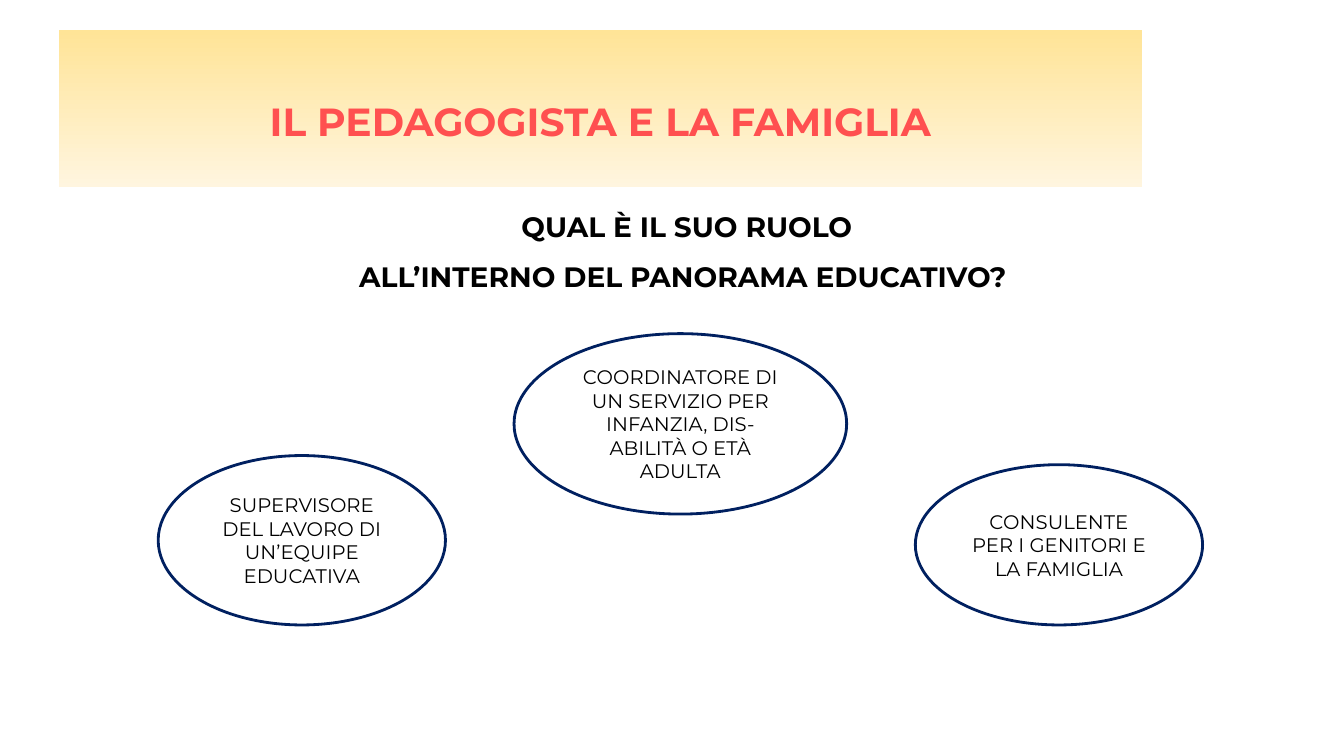
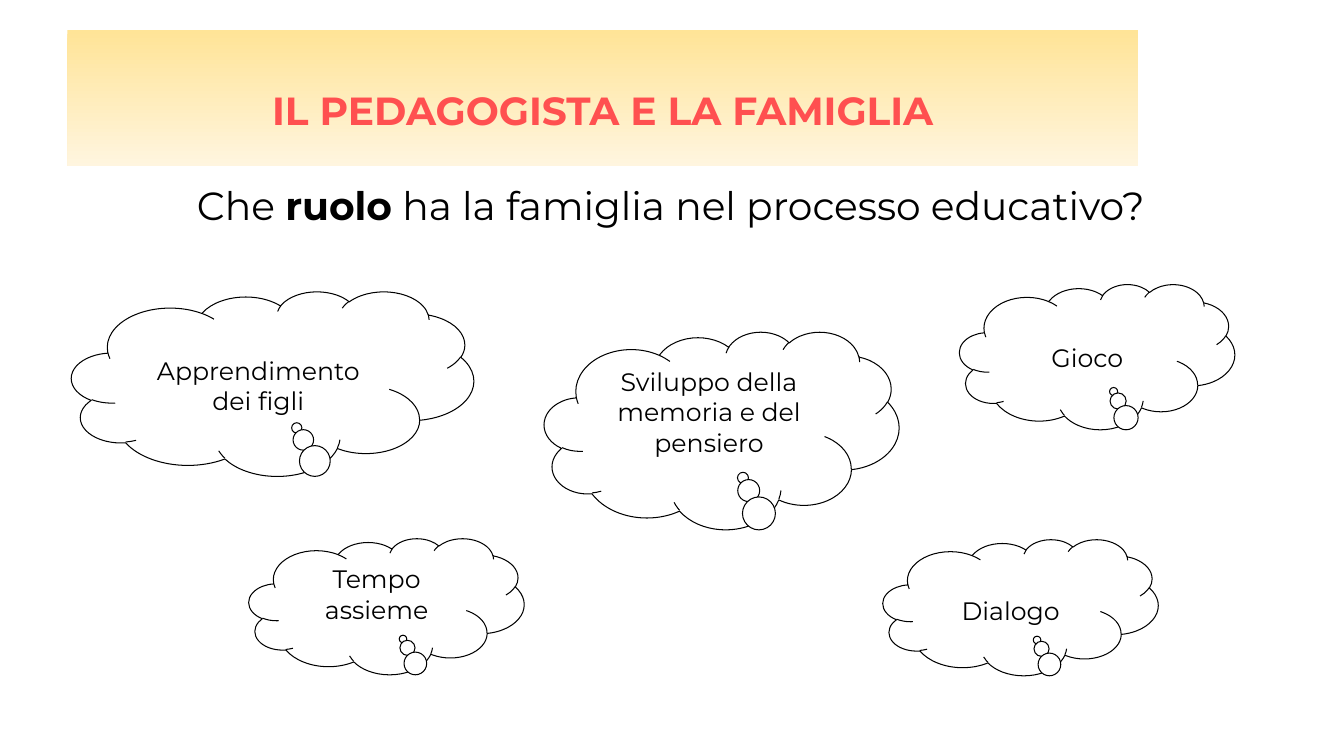
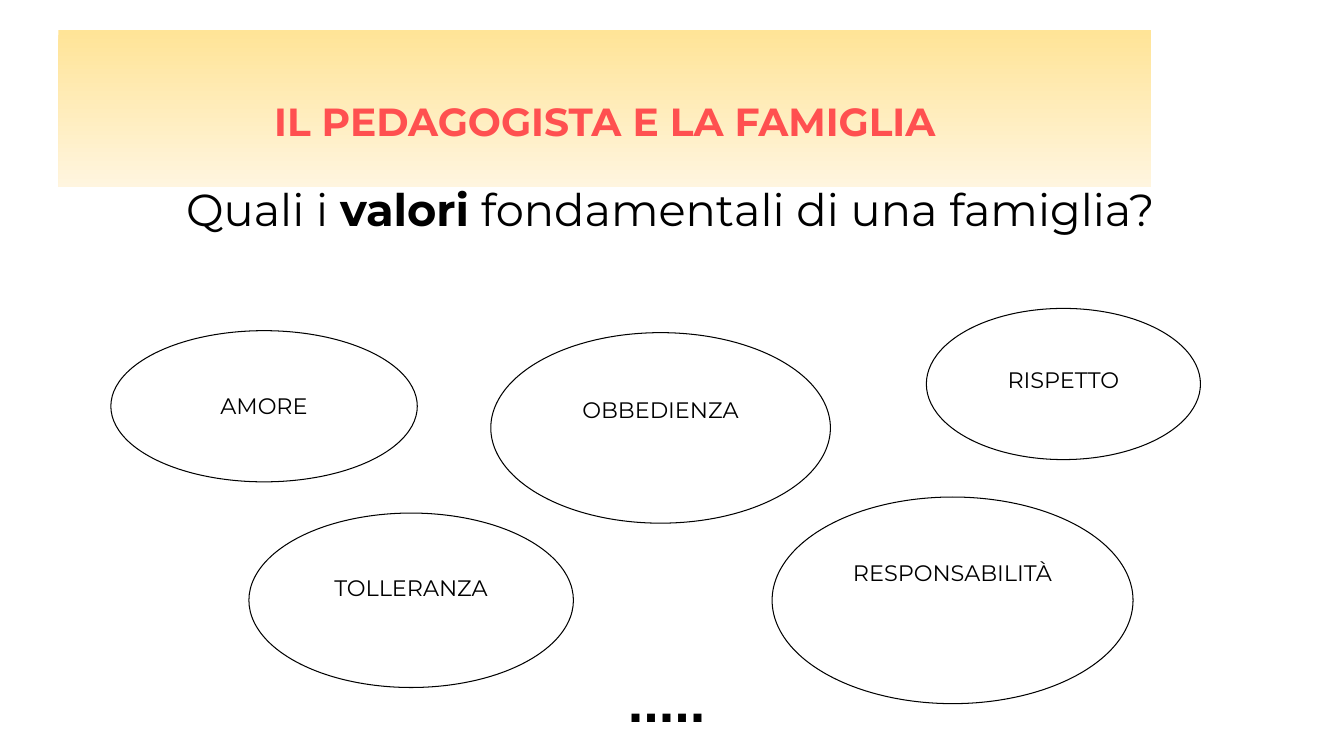
from dataclasses import dataclass

from pptx import Presentation
from pptx.dml.color import RGBColor
from pptx.enum.shapes import MSO_SHAPE
from pptx.enum.text import MSO_ANCHOR, PP_ALIGN
from pptx.util import Pt

RECTANGLE, ELLIPSE, CLOUD = MSO_SHAPE.RECTANGLE, MSO_SHAPE.OVAL, MSO_SHAPE.CLOUD_CALLOUT
TOP, MIDDLE = MSO_ANCHOR.TOP, MSO_ANCHOR.MIDDLE
LEFT, CENTER = PP_ALIGN.LEFT, PP_ALIGN.CENTER


@dataclass(frozen=True)
class Theme:
    font: str = "Montserrat"
    dots_font: str = "Arial"
    black: RGBColor = RGBColor(0x00, 0x00, 0x00)
    white: RGBColor = RGBColor(0xFF, 0xFF, 0xFF)
    navy: RGBColor = RGBColor(0x00, 0x20, 0x60)
    coral: RGBColor = RGBColor(0xFF, 0x50, 0x50)
    band_top: RGBColor = RGBColor(0xFF, 0xE4, 0x97)
    band_bottom: RGBColor = RGBColor(0xFF, 0xF5, 0xDF)
    title_size: float = 28
    role_size: float = 14
    cloud_size: float = 18
    value_size: float = 16
    dots_size: float = 40


THEME = Theme()
TITLE = "IL PEDAGOGISTA E LA FAMIGLIA"


def write(shape, lines, size, color=THEME.black, font=THEME.font, align=CENTER,
          anchor=TOP, spacing=1.0, top_inset=3.6):
    """Each line is a list of (text, bold) runs."""
    frame = shape.text_frame
    frame.word_wrap = True
    frame.vertical_anchor = anchor
    frame.margin_top = Pt(top_inset)
    for index, line in enumerate(lines):
        paragraph = frame.paragraphs[0] if index == 0 else frame.add_paragraph()
        paragraph.alignment = align
        paragraph.line_spacing = spacing
        for text, bold in line:
            run = paragraph.add_run()
            run.text = text
            run.font.name = font
            run.font.size = Pt(size)
            run.font.bold = bold
            run.font.color.rgb = color


def add_figure(slide, kind, box, line_color=None, line_width=0.75):
    shape = slide.shapes.add_shape(kind, *map(Pt, box))
    shape.shadow.inherit = False
    if line_color is None:
        shape.line.fill.background()
    else:
        shape.fill.solid()
        shape.fill.fore_color.rgb = THEME.white
        shape.line.color.rgb = line_color
        shape.line.width = Pt(line_width)
    return shape


presentation = Presentation()
presentation.slide_width, presentation.slide_height = Pt(960), Pt(540)
blank_layout = presentation.slide_layouts[6]

# Title band and question of each slide: boxes are left, top, width, height
headings = [
    dict(band=(41.8, 21.6, 774, 112.3), box=(59.8, 133.9, 861.8, 348.5), size=20, spacing=1.5,
         lines=[[("QUAL È IL SUO RUOLO", True)],
                [("ALL’INTERNO DEL PANORAMA EDUCATIVO? ", True)]]),
    dict(band=(48.2, 21.6, 764.6, 97.2), box=(48.2, 126, 861.8, 376.6), size=28, spacing=1.0,
         lines=[[("Che ", False), ("ruolo", True),
                 (" ha la famiglia nel processo educativo?", False)]]),
    dict(band=(41.8, 21.6, 780.5, 112.3), box=(48.2, 126, 861.8, 402.5), size=32, spacing=1.0,
         lines=[[("Quali i ", False), ("valori", True),
                 (" fondamentali di una famiglia?", False)]]),
]
slides = []
for heading in headings:
    slide = presentation.slides.add_slide(blank_layout)
    slides.append(slide)
    question = slide.shapes.add_textbox(*map(Pt, heading["box"]))
    write(question, heading["lines"], heading["size"], spacing=heading["spacing"])
    band = add_figure(slide, RECTANGLE, heading["band"])
    band.fill.gradient()
    band.fill.gradient_angle = 270
    for stop, color in zip(band.fill.gradient_stops, (THEME.band_top, THEME.band_bottom)):
        stop.color.rgb = color
    write(band, [[(TITLE, True)]], THEME.title_size, color=THEME.coral, anchor=MIDDLE, spacing=1.5)

role_slide, family_slide, values_slide = slides

# Roles of the pedagogist
roles = [
    ("SUPERVISORE DEL LAVORO DI UN’EQUIPE EDUCATIVA", (113, 325.4, 205.2, 121)),
    ("COORDINATORE DI UN SERVIZIO PER INFANZIA, DIS-ABILITÀ O ETÀ ADULTA",
     (367.2, 238.3, 237.6, 128.9)),
    ("CONSULENTE PER I GENITORI E LA FAMIGLIA", (653.8, 331.9, 205.2, 114.5)),
]
for text, box in roles:
    ellipse = add_figure(role_slide, ELLIPSE, box, THEME.navy, 2)
    write(ellipse, [[(text, False)]], THEME.role_size, anchor=MIDDLE)

# Family tasks in clouds and values in ellipses, each with its top inset
clouds = [
    ("Apprendimento dei figli", (51.1, 208.1, 287.3, 131.8), 25.6),
    ("Sviluppo della memoria e del pensiero", (388.8, 236.9, 253.4, 141.1), 3.6),
    ("Gioco", (685.4, 203, 196.6, 103.7), 25.6),
    ("Tempo assieme", (177.8, 384.5, 196.6, 97.2), 3.6),
    ("Dialogo", (630.7, 385.2, 196.6, 97.2), 25.6),
]
family_values = [
    ("AMORE", (79.2, 236.2, 218.9, 108), 28),
    ("OBBEDIENZA", (350.6, 237.6, 242.6, 136.1), 25.6),
    ("RISPETTO", (661.7, 220.3, 195.8, 108), 25.6),
    ("TOLLERANZA", (177.8, 366.5, 231.8, 124.6), 25.6),
    ("RESPONSABILITÀ", (551.5, 355, 257.8, 147.6), 23.1),
]
for slide, kind, size, items in [
    (family_slide, CLOUD, THEME.cloud_size, clouds),
    (values_slide, ELLIPSE, THEME.value_size, family_values),
]:
    for text, box, top_inset in items:
        figure = add_figure(slide, kind, box, THEME.black)
        if kind == CLOUD:
            figure.adjustments[0], figure.adjustments[1] = 0.06, 0.24
        write(figure, [[(text, False)]], size, top_inset=top_inset)

# Closing dots
dots = values_slide.shapes.add_textbox(Pt(441.4), Pt(472.3), Pt(126.7), Pt(55.4))
write(dots, [[(".....", True)]], THEME.dots_size, font=THEME.dots_font, align=LEFT)

presentation.save("out.pptx")
